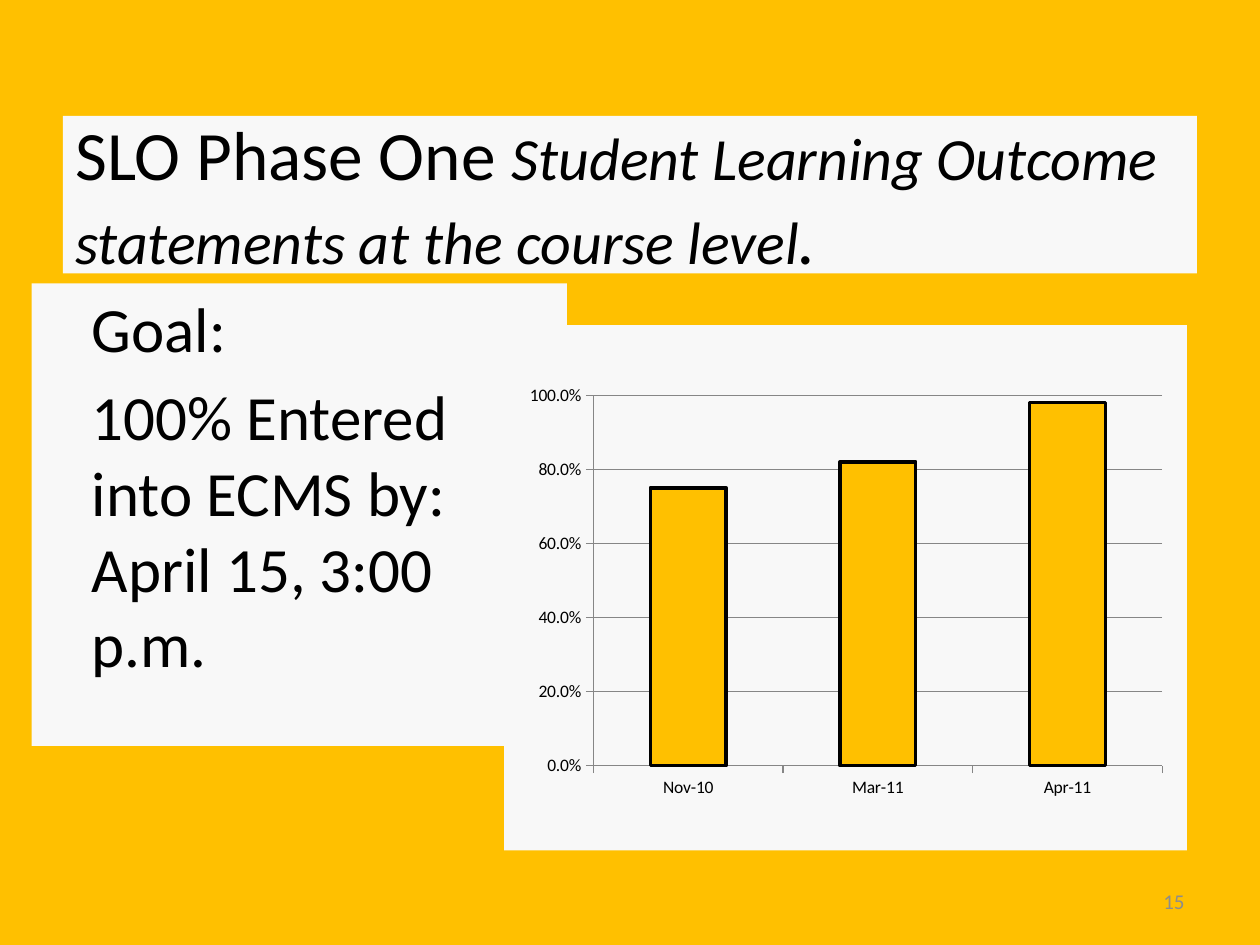
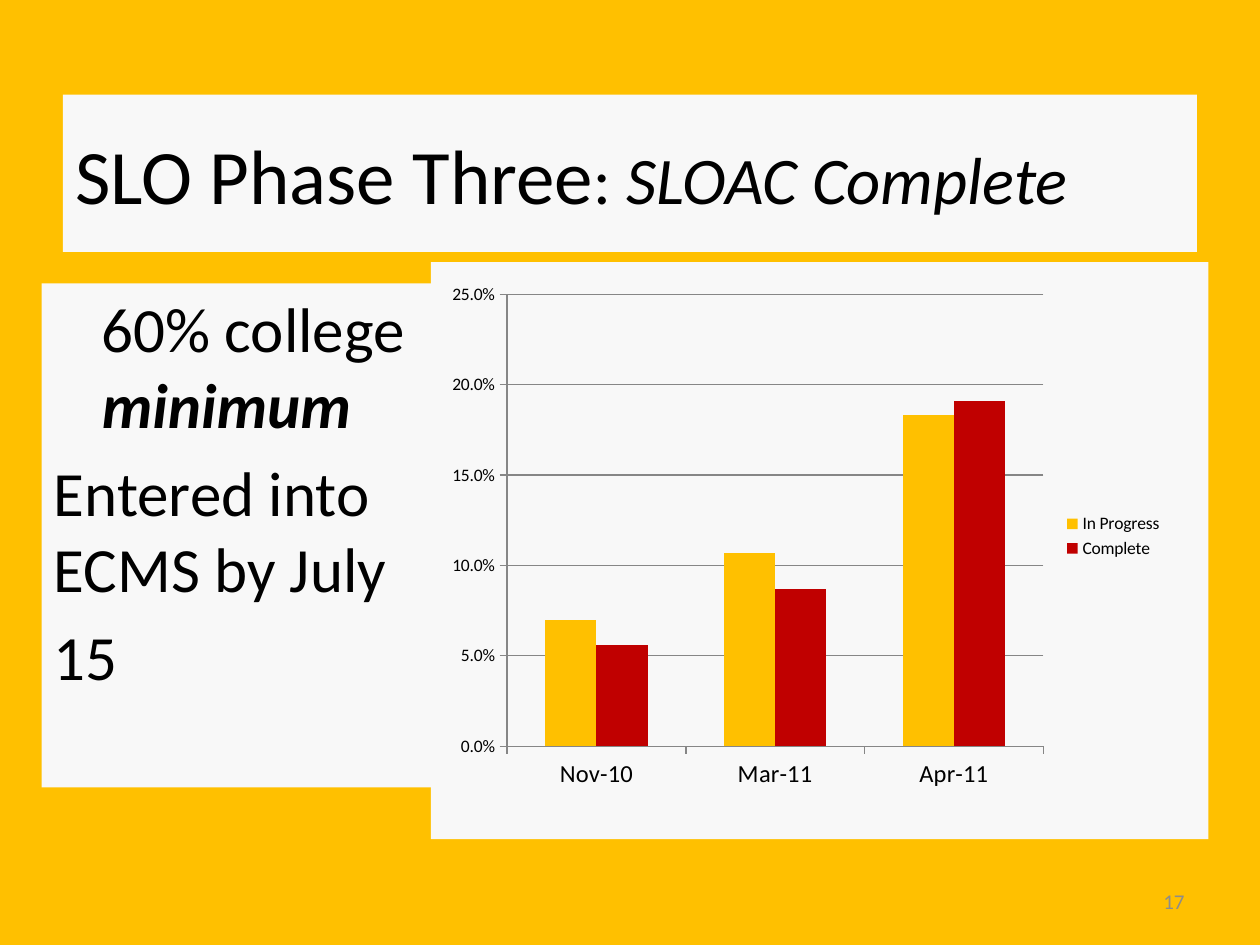
from lxml.etree import SubElement
from pptx import Presentation
from pptx.chart.data import CategoryChartData
from pptx.dml.color import RGBColor
from pptx.enum.chart import XL_CHART_TYPE, XL_LEGEND_POSITION, XL_TICK_MARK
from pptx.enum.shapes import MSO_SHAPE
from pptx.enum.text import MSO_ANCHOR, PP_ALIGN
from pptx.oxml.ns import qn
from pptx.util import Inches, Pt

COLORS = {
    "gold": "FFC000",
    "panel": "F8F8F8",
    "text": "000000",
    "number": "8C8C8C",
    "axis": "868686",
    "red": "C00000",
}
FONT = "Calibri"
MONTHS = ["Nov-10", "Mar-11", "Apr-11"]
BODY_SIZE = 36


def color(name):
    return RGBColor.from_string(COLORS[name])


class DeckBuilder:
    def __init__(self):
        self.deck = Presentation()
        self.deck.slide_width = Inches(10)
        self.deck.slide_height = Inches(7.5)
        self.page = None

    def add_page(self):
        self.page = self.deck.slides.add_slide(self.deck.slide_layouts[6])
        background = self.page.background.fill
        background.solid()
        background.fore_color.rgb = color("gold")

    def add_panel(self, left, top, width, height):
        box = self.page.shapes.add_shape(
            MSO_SHAPE.RECTANGLE, Inches(left), Inches(top), Inches(width), Inches(height)
        )
        box.shadow.inherit = False
        box.fill.solid()
        box.fill.fore_color.rgb = color("panel")
        box.line.fill.background()
        return box

    def add_span(self, para, text, size, ink="text", bold=False, italic=False):
        span = para.add_run()
        span.text = text
        span.font.name = FONT
        span.font.size = Pt(size)
        span.font.bold = bold
        span.font.italic = italic
        span.font.color.rgb = color(ink)

    def add_title(self, top, spans):
        frame = self.add_panel(0.5, top, 9, 1.25).text_frame
        frame.word_wrap = True
        frame.vertical_anchor = MSO_ANCHOR.MIDDLE
        para = frame.paragraphs[0]
        para.alignment = PP_ALIGN.LEFT
        for text, size, italic in spans:
            self.add_span(para, text, size, italic=italic)

    def add_body(self, left, top, width, height, paragraphs):
        frame = self.add_panel(left, top, width, height).text_frame
        frame.word_wrap = True
        frame.vertical_anchor = MSO_ANCHOR.TOP
        for index, (indent, spans) in enumerate(paragraphs):
            para = frame.add_paragraph() if index else frame.paragraphs[0]
            para.alignment = PP_ALIGN.LEFT
            para.space_before = Pt(0.2 * BODY_SIZE if index else 0)
            properties = para._p.get_or_add_pPr()
            properties.set("marL", str(Inches(indent)))
            properties.set("indent", "0")
            for text, strong in spans:
                self.add_span(para, text, BODY_SIZE, bold=strong, italic=strong)

    def add_number(self, number):
        box = self.page.shapes.add_textbox(
            Inches(7.17), Inches(6.95), Inches(2.33), Inches(0.4)
        )
        frame = box.text_frame
        frame.word_wrap = True
        frame.vertical_anchor = MSO_ANCHOR.MIDDLE
        para = frame.paragraphs[0]
        para.alignment = PP_ALIGN.RIGHT
        self.add_span(para, number, 12, "number")

    def add_columns(self, left, top, width, height, series, plot_area, maximum, step,
                    month_size=10, outlined=False):
        data = CategoryChartData(number_format="0.0%")
        data.categories = MONTHS
        for name, values, _ in series:
            data.add_series(name, values)
        chart = self.page.shapes.add_chart(
            XL_CHART_TYPE.COLUMN_CLUSTERED,
            Inches(left), Inches(top), Inches(width), Inches(height), data,
        ).chart
        chart.has_title = False
        chart.font.name = FONT
        chart.font.size = Pt(10)
        chart.font.color.rgb = color("text")
        chart.has_legend = len(series) > 1
        if chart.has_legend:
            chart.legend.position = XL_LEGEND_POSITION.RIGHT
            chart.legend.include_in_layout = False
            chart.legend.font.size = Pt(10)
        self.style_axes(chart, maximum, step, month_size)
        plot = chart.plots[0]
        plot.vary_by_categories = False
        plot.gap_width = 150
        plot.overlap = 0
        for columns, (_, _, fill) in zip(plot.series, series):
            columns.format.fill.solid()
            columns.format.fill.fore_color.rgb = color(fill)
            if outlined:
                columns.format.line.color.rgb = color("text")
                columns.format.line.width = Pt(2)
        self.place_plot(chart, plot_area)

    def style_axes(self, chart, maximum, step, month_size):
        months, rates = chart.category_axis, chart.value_axis
        rates.minimum_scale = 0
        rates.maximum_scale = maximum
        rates.major_unit = step
        rates.has_major_gridlines = True
        rates.tick_labels.number_format = "0.0%"
        rates.tick_labels.number_format_is_linked = False
        months.tick_labels.font.size = Pt(month_size)
        rates.tick_labels.font.size = Pt(10)
        for axis in (months, rates):
            axis.major_tick_mark = XL_TICK_MARK.OUTSIDE
            axis.minor_tick_mark = XL_TICK_MARK.NONE
        for part in (months, rates, rates.major_gridlines):
            part.format.line.color.rgb = color("axis")
            part.format.line.width = Pt(0.75)

    def place_plot(self, chart, plot_area):
        area = chart._chartSpace.find(".//" + qn("c:plotArea"))
        layout = area.find(qn("c:layout"))
        if layout is None:
            layout = SubElement(area, qn("c:layout"))
            area.insert(0, layout)
        manual = SubElement(layout, qn("c:manualLayout"))
        settings = [("layoutTarget", "inner"), ("xMode", "edge"), ("yMode", "edge")]
        settings += zip("xywh", plot_area)
        for tag, value in settings:
            SubElement(manual, qn("c:" + tag)).set("val", str(value))


def build_phase_one(builder):
    builder.add_page()
    builder.add_title(0.92, [
        ("SLO Phase One ", 39.6, False),
        ("Student Learning Outcome statements at the course level", 34.2, True),
        (".", 39.6, True),
    ])
    builder.add_body(0.25, 2.25, 4.25, 3.67, [
        (0.38, [("Goal:", False)]),
        (0.38, [("100% Entered into ECMS by: April 15, 3:00 p.m.", False)]),
    ])
    builder.add_number("15")
    builder.add_panel(4, 2.58, 5.42, 4.17)
    builder.add_columns(
        4.08, 3, 5.25, 3.42,
        [("Series 1", (0.75, 0.82, 0.98), "gold")],
        (0.12, 0.04, 0.86, 0.86), 1, 0.2, outlined=True,
    )


def build_phase_three(builder):
    builder.add_page()
    builder.add_title(0.75, [
        ("SLO Phase Three", 44, False),
        (": ", 38, False),
        ("SLOAC Complete", 38, True),
    ])
    builder.add_body(0.33, 2.25, 3.25, 4, [
        (0.38, [("60% college ", False), ("minimum", True)]),
        (0, [("Entered into ECMS by July", False)]),
        (0, [("15", False)]),
    ])
    builder.add_number("17")
    builder.add_panel(3.42, 2.08, 6.17, 4.58)
    builder.add_columns(
        3.5, 2.17, 5.83, 4.17,
        [("In Progress", (0.07, 0.107, 0.183), "gold"),
         ("Complete", (0.056, 0.087, 0.191), "red")],
        (0.09, 0.04, 0.73, 0.86), 0.25, 0.05, month_size=14,
    )


def main():
    builder = DeckBuilder()
    build_phase_one(builder)
    build_phase_three(builder)
    builder.deck.save("out.pptx")


if __name__ == "__main__":
    main()
